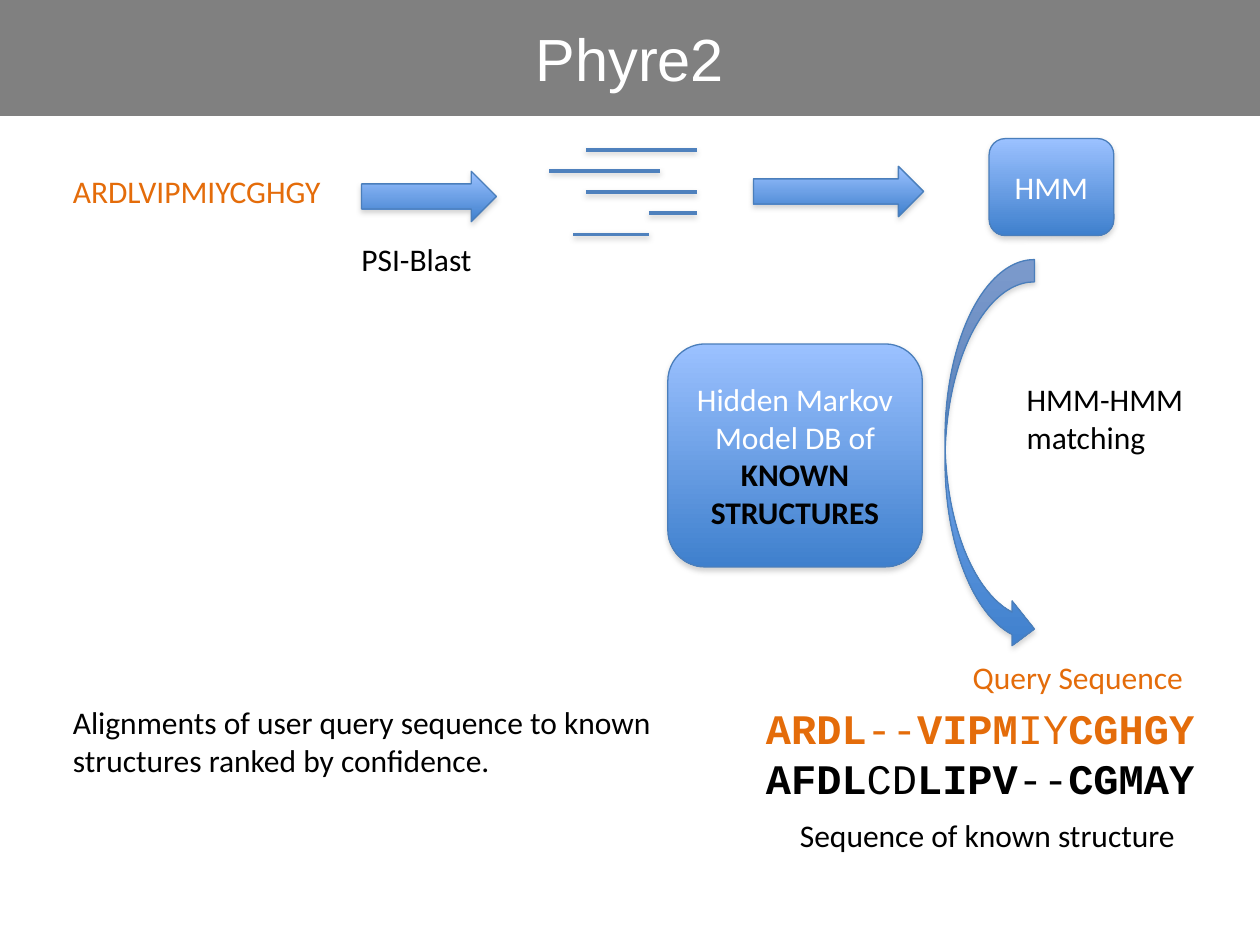
from dataclasses import dataclass
from typing import Any, NamedTuple

from lxml.etree import SubElement as Sub
from pptx import Presentation
from pptx.dml.color import RGBColor as Rgb
from pptx.enum.shapes import MSO_CONNECTOR as Link, MSO_SHAPE as Kind
from pptx.enum.text import MSO_ANCHOR as Anchor, MSO_AUTO_SIZE as Fit, PP_ALIGN as Align
from pptx.oxml.ns import qn
from pptx.util import Inches, Pt


@dataclass(frozen=True)
class Theme:
    white: str = "FFFFFF"
    black: str = "000000"
    query: str = "E46C0A"
    band: str = "808080"
    top: str = "9BC1FF"
    base: str = "3F80CD"
    edge: str = "4A7EBB"
    strand: str = "4F81BD"
    shade: str = "808080"
    sans: str = "Calibri"
    mono: str = "Courier New"
    head: str = "Arial"
    body_size: int = 18
    code_size: int = 24
    head_size: int = 34


LOOK = Theme()


class Run(NamedTuple):
    text: str
    color: str = LOOK.black
    bold: bool = False
    font: str = LOOK.sans
    size: int = LOOK.body_size


Lines = list[list[Run]]


class Box(NamedTuple):
    x: float
    y: float
    w: float
    h: float


class Label(NamedTuple):
    box: Box
    lines: Lines
    wrap: bool = False
    align: Align = Align.LEFT


class Block(NamedTuple):
    kind: Kind
    box: Box
    lines: Lines = []


def code(parts: list[str], color: str) -> Lines:
    """Style an aligned sequence: every other part, from the first, is bold."""
    return [[Run(part, color, i % 2 == 0, LOOK.mono, LOOK.code_size)
             for i, part in enumerate(parts)]]


LABELS = [
    Label(Box(0.48, 1.32, 2.19, 0.4), [[Run("ARDLVIPMIYCGHGY", LOOK.query)]]),
    Label(Box(2.77, 1.86, 1.13, 0.4), [[Run("PSI-Blast")]], wrap=True),
    Label(Box(8.05, 2.97, 1.46, 0.71), [[Run("HMM-HMM")], [Run("matching")]]),
    Label(Box(0.48, 5.53, 5.26, 0.71),
          [[Run("Alignments of user query sequence to known structures "
                "ranked by confidence.")]], wrap=True),
    Label(Box(5.98, 5.53, 3.65, 0.51),
          code(["ARDL", "--", "VIPM", "IY", "CGHGY"], LOOK.query)),
    Label(Box(5.98, 5.92, 3.65, 0.51),
          code(["AFDL", "CD", "LIPV", "--", "CGMAY"], LOOK.black)),
    Label(Box(6.25, 6.43, 3.21, 0.4), [[Run("Sequence of known structure")]]),
    Label(Box(7.61, 5.17, 1.89, 0.4), [[Run("Query Sequence", LOOK.query)]],
          align=Align.CENTER),
]

BLOCKS = [
    Block(Kind.ROUNDED_RECTANGLE, Box(7.85, 1.1, 0.99, 0.77),
          [[Run("HMM", LOOK.white)]]),
    Block(Kind.RIGHT_ARROW, Box(2.87, 1.36, 1.07, 0.4)),
    Block(Kind.ROUNDED_RECTANGLE, Box(5.3, 2.73, 2.02, 1.77),
          [[Run("Hidden Markov Model DB of ", LOOK.white), Run("KNOWN", bold=True)],
           [Run("STRUCTURES", bold=True)]]),
    Block(Kind.RIGHT_ARROW, Box(5.98, 1.32, 1.35, 0.4)),
    Block(Kind.CURVED_RIGHT_ARROW, Box(7.5, 2.06, 0.71, 3.11)),
]

# Left and right ends of the stacked strands, top to bottom
STRANDS = [(4.65, 5.53), (4.36, 5.24), (4.65, 5.53), (5.15, 5.53), (4.55, 5.15)]
STRAND_TOP, STRAND_STEP = 1.19, 0.1675


def place(box: Box) -> list[Inches]:
    return [Inches(n) for n in box]


def write(frame: Any, lines: Lines, align: Align) -> None:
    for i, line in enumerate(lines):
        para = frame.add_paragraph() if i else frame.paragraphs[0]
        para.alignment = align
        for item in line:
            run = para.add_run()
            run.text = item.text
            font = run.font
            font.name, font.size, font.bold = item.font, Pt(item.size), item.bold
            font.color.rgb = Rgb.from_string(item.color)


def cast(shape: Any, dist: float, alpha: int) -> None:
    """Give the shape a soft shadow straight below it."""
    effects = Sub(shape._element.spPr, qn("a:effectLst"))
    outer = Sub(effects, qn("a:outerShdw"), blurRad=str(Pt(3.1)), dist=str(Pt(dist)),
                dir="5400000", rotWithShape="0")
    color = Sub(outer, qn("a:srgbClr"), val=LOOK.shade)
    Sub(color, qn("a:alpha"), val=str(alpha * 1000))


def add_label(slide: Any, label: Label) -> None:
    frame = slide.shapes.add_textbox(*place(label.box)).text_frame
    frame.word_wrap = label.wrap
    frame.auto_size = Fit.SHAPE_TO_FIT_TEXT
    write(frame, label.lines, label.align)


def add_block(slide: Any, block: Block) -> None:
    shape = slide.shapes.add_shape(block.kind, *place(block.box))
    shape.fill.gradient()
    shape.fill.gradient_angle = 270
    for stop, color in zip(shape.fill.gradient_stops, (LOOK.top, LOOK.base)):
        stop.color.rgb = Rgb.from_string(color)
    for stop, spot in zip(shape.fill.gradient_stops, (0, 1)):
        stop.position = spot
    shape.line.color.rgb = Rgb.from_string(LOOK.edge)
    shape.line.width = Pt(0.75)
    cast(shape, 1.8, 35)
    frame = shape.text_frame
    frame.word_wrap = True
    frame.vertical_anchor = Anchor.MIDDLE
    write(frame, block.lines, Align.CENTER)


def add_strand(slide: Any, left: float, right: float, y: float) -> None:
    line = slide.shapes.add_connector(
        Link.STRAIGHT, Inches(left), Inches(y), Inches(right), Inches(y))
    line.line.color.rgb = Rgb.from_string(LOOK.strand)
    line.line.width = Pt(2)
    cast(line, 1.6, 38)


def set_title(slide: Any, text: str) -> None:
    title = slide.shapes.title
    title.left, title.top, title.width, title.height = place(Box(0, 0, 10, 0.92))
    title.fill.solid()
    title.fill.fore_color.rgb = Rgb.from_string(LOOK.band)
    frame = title.text_frame
    frame.auto_size = Fit.NONE
    frame.vertical_anchor = Anchor.MIDDLE
    write(frame, [[Run(text, LOOK.white, font=LOOK.head, size=LOOK.head_size)]],
          Align.CENTER)


def main() -> None:
    deck = Presentation()
    deck.slide_width, deck.slide_height = Inches(10), Inches(7.5)
    slide = deck.slides.add_slide(deck.slide_layouts[5])
    set_title(slide, "Phyre2")
    for block in BLOCKS:
        add_block(slide, block)
    for i, (left, right) in enumerate(STRANDS):
        add_strand(slide, left, right, STRAND_TOP + i * STRAND_STEP)
    for label in LABELS:
        add_label(slide, label)
    deck.save("out.pptx")


if __name__ == "__main__":
    main()
